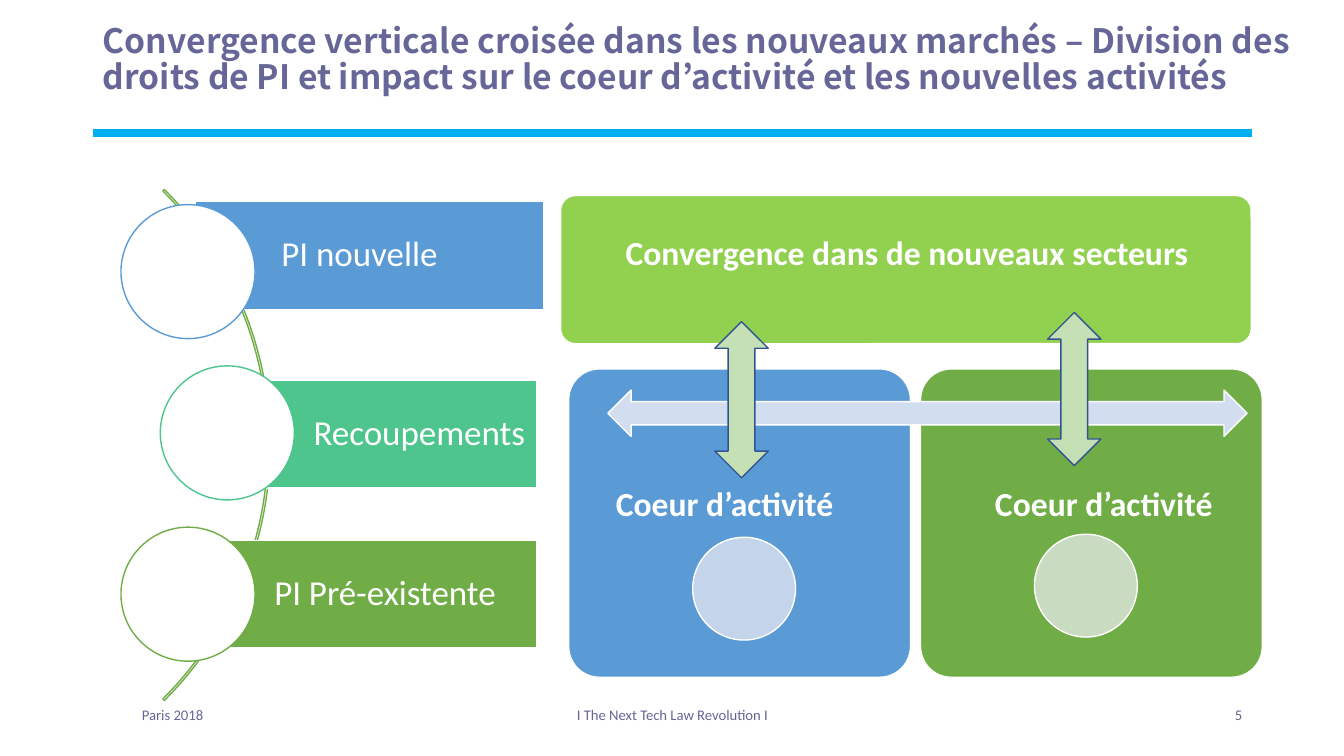
from lxml import etree
from pptx import Presentation
from pptx.dml.color import RGBColor
from pptx.enum import shapes, text
from pptx.oxml.ns import qn
from pptx.util import Inches, Pt

WHITE = RGBColor(0xFF, 0xFF, 0xFF)
PURPLE = RGBColor(0x66, 0x66, 0x99)
CYAN = RGBColor(0x00, 0xB0, 0xF0)
BLUE = RGBColor(0x5B, 0x9B, 0xD5)
TEAL = RGBColor(0x4D, 0xC5, 0x8D)
GREEN = RGBColor(0x70, 0xAD, 0x47)
LIME = RGBColor(0x92, 0xD0, 0x50)
PALE_BLUE = RGBColor(0xC4, 0xD5, 0xEB)
PALE_GREEN = RGBColor(0xC9, 0xDB, 0xC1)
ICE = RGBColor(0xD2, 0xDE, 0xEF)
MINT = RGBColor(0xC5, 0xE0, 0xB4)
NAVY = RGBColor(0x32, 0x54, 0x91)

SHAPE = shapes.MSO_SHAPE
ALIGN = text.PP_ALIGN


def format_text(tf, content, size, color, bold=False, font="Calibri", align=ALIGN.LEFT):
    tf.text = content
    p = tf.paragraphs[0]
    p.alignment = align
    f = p.runs[0].font
    f.name, f.size, f.bold = font, Pt(size), bold
    f.color.rgb = color
    return p


def add_title(s, content):
    title = s.shapes.title
    title.left, title.top = Inches(0.92), Inches(0.19)
    title.width, title.height = Inches(12.08), Inches(1.08)
    tf = title.text_frame
    tf.word_wrap = True
    tf.auto_size = text.MSO_AUTO_SIZE.NONE
    tf.vertical_anchor = text.MSO_ANCHOR.TOP
    p = format_text(tf, content, 24, PURPLE, True, "Noto Sans CJK KR")
    p.line_spacing = 0.9


def add_rule(s):
    line = s.shapes.add_connector(shapes.MSO_CONNECTOR.STRAIGHT, Inches(0.92), Inches(1.32),
                                  Inches(12.42), Inches(1.32))
    line.line.color.rgb = CYAN
    line.line.width = Pt(6)
    etree.SubElement(line._element.spPr, qn("a:effectLst"))


def add_text(s, box, content, size, color, **style):
    tb = s.shapes.add_textbox(*map(Inches, box))
    tb.text_frame.word_wrap = True
    format_text(tb.text_frame, content, size, color, **style)


def add_figure(s, kind, box, fill=None, line=WHITE, adjustments=()):
    sp = s.shapes.add_shape(kind, *map(Inches, box))
    sp.shadow.inherit = False
    if fill is None:
        sp.fill.background()
    else:
        sp.fill.solid()
        sp.fill.fore_color.rgb = fill
    sp.line.color.rgb = line
    sp.line.width = Pt(1)
    for i, value in enumerate(adjustments):
        sp.adjustments[i] = value
    return sp


def add_ip_label(s, content, color, bar, circle_left, circle_top):
    """Coloured bar with its text, and the white circle over its left end."""
    sp = add_figure(s, SHAPE.RECTANGLE, bar, color)
    tf = sp.text_frame
    tf.word_wrap = True
    tf.vertical_anchor = text.MSO_ANCHOR.MIDDLE
    tf.margin_left = Inches(0.85)
    tf.margin_top = tf.margin_right = tf.margin_bottom = Inches(0.07)
    format_text(tf, content, 25, WHITE).line_spacing = 0.9
    add_figure(s, SHAPE.OVAL, (circle_left, circle_top, 1.33, 1.33), WHITE, color)


def add_core_panel(s, left, color, circle_left, circle_top, circle_color):
    add_figure(s, SHAPE.ROUNDED_RECTANGLE, (left, 3.66, 3.39, 3.06), color, adjustments=[0.1])
    add_figure(s, SHAPE.OVAL, (circle_left, circle_top, 1.02, 1.02), circle_color)


def main():
    prs = Presentation()
    prs.slide_width, prs.slide_height = Inches(13.33), Inches(7.5)
    s = prs.slides.add_slide(prs.slide_layouts[5])

    add_rule(s)
    add_title(s, "Convergence verticale croisée dans les nouveaux marchés – Division des "
                 "droits de PI et impact sur le coeur d’activité et les nouvelles activités")
    for left, width, content, align in [
        (1.31, 2.6, "Paris 2018", ALIGN.LEFT),
        (4.42, 4.5, "I The Next Tech Law Revolution I", ALIGN.CENTER),
        (9.42, 3, "5", ALIGN.RIGHT),
    ]:
        add_text(s, (left, 6.95, width, 0.4), content, 10.5, PURPLE, align=align)

    add_core_panel(s, 5.64, BLUE, 6.87, 5.33, PALE_BLUE)
    add_core_panel(s, 9.13, GREEN, 10.26, 5.3, PALE_GREEN)
    add_figure(s, SHAPE.LEFT_RIGHT_ARROW, (6.03, 3.87, 6.34, 0.46), ICE)

    add_figure(s, SHAPE.BLOCK_ARC, (-4.49, 0.83, 7.17, 7.17), line=GREEN,
               adjustments=[189, 27, 0.003])
    add_ip_label(s, "PI nouvelle", BLUE, (1.94, 2, 3.45, 1.07), 1.2, 2.03)
    add_ip_label(s, "Recoupements", TEAL, (2.26, 3.77, 3.06, 1.07), 1.59, 3.63)
    add_ip_label(s, "PI Pré-existente", GREEN, (1.87, 5.36, 3.45, 1.07), 1.2, 5.23)

    add_figure(s, SHAPE.ROUNDED_RECTANGLE, (5.56, 1.94, 6.85, 1.47), LIME, adjustments=[0.1])
    add_text(s, (6.05, 2.25, 5.89, 0.5), "Convergence dans de nouveaux secteurs", 24, WHITE,
             bold=True, align=ALIGN.CENTER)
    for left in (6.01, 9.77):
        add_text(s, (left, 4.74, 2.69, 0.5), "Coeur d’activité", 24, WHITE, bold=True)
    for box in ((7.09, 3.19, 0.53, 1.55), (10.39, 3.1, 0.53, 1.52)):
        add_figure(s, SHAPE.UP_DOWN_ARROW, box, MINT, NAVY)

    prs.save("out.pptx")


if __name__ == "__main__":
    main()
